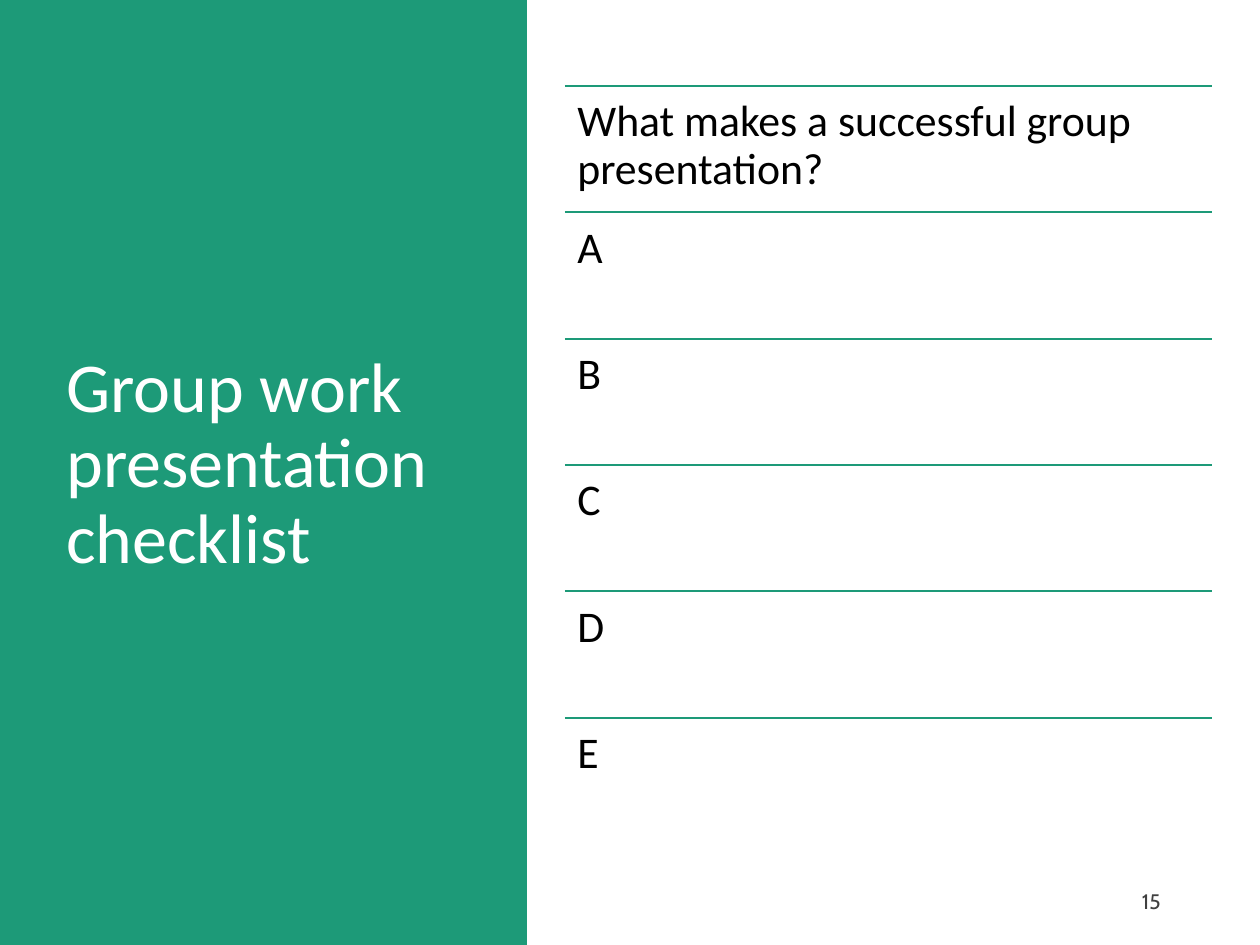
"""Build the group work presentation checklist slide."""
from dataclasses import dataclass

from lxml import etree
from pptx import Presentation
from pptx.dml.color import RGBColor
from pptx.enum.shapes import MSO_CONNECTOR, MSO_SHAPE
from pptx.enum.text import MSO_ANCHOR, PP_ALIGN
from pptx.oxml.ns import qn
from pptx.util import Emu, Pt

STRAIGHT = MSO_CONNECTOR.STRAIGHT
RECTANGLE = MSO_SHAPE.RECTANGLE
TOP, MIDDLE = MSO_ANCHOR.TOP, MSO_ANCHOR.MIDDLE
LEFT, RIGHT = PP_ALIGN.LEFT, PP_ALIGN.RIGHT

TITLE = "Group work presentation checklist"
ROWS = ["What makes a successful group presentation?", "A", "B", "C", "D", "E"]
PAGE_NUMBER = "15"

PX = 914400 / 126
PAGE_WIDTH, PAGE_HEIGHT = 1260, 945
PANEL_WIDTH = 527
BODY_TOP, BODY_HEIGHT = 86, 758
LIST_LEFT, LIST_WIDTH = 565, 647


@dataclass(frozen=True)
class Theme:
    green: str = "1D9A78"
    white: str = "FFFFFF"
    black: str = "000000"
    grey: str = "404040"
    body_font: str = "Calibri"
    number_font: str = "Cabin"
    title_size: int = 40
    row_size: int = 25
    number_size: int = 12
    rule_width: int = 1


THEME = Theme()


def px(length):
    return Emu(round(length * PX))


def add_text(page, text, left, top, width, height, *, size, color,
             font=THEME.body_font, anchor=TOP, align=LEFT, spacing=1.0,
             after=0, inset=6):
    box = page.shapes.add_textbox(px(left), px(top), px(width), px(height))
    frame = box.text_frame
    frame.word_wrap = True
    frame.vertical_anchor = anchor
    frame.margin_top = frame.margin_bottom = px(inset)
    para = frame.paragraphs[0]
    para.alignment = align
    para.line_spacing = spacing
    para.space_after = Pt(after)
    span = para.add_run()
    span.text = text
    span.font.name = font
    span.font.size = Pt(size)
    span.font.color.rgb = RGBColor.from_string(color)


def add_panel(page):
    panel = page.shapes.add_shape(RECTANGLE, 0, 0, px(PANEL_WIDTH), px(PAGE_HEIGHT))
    panel.shadow.inherit = False
    panel.fill.solid()
    panel.fill.fore_color.rgb = RGBColor.from_string(THEME.green)
    panel.line.fill.background()


def add_rule(page, left, top, width):
    rule = page.shapes.add_connector(
        STRAIGHT, px(left), px(top), px(left + width), px(top))
    rule.line.color.rgb = RGBColor.from_string(THEME.green)
    rule.line.width = Pt(THEME.rule_width)
    etree.SubElement(rule._element.spPr, qn("a:effectLst"))


def add_checklist(page):
    row_height = BODY_HEIGHT / len(ROWS)
    for index, text in enumerate(ROWS):
        top = BODY_TOP + index * row_height
        add_rule(page, LIST_LEFT, top, LIST_WIDTH)
        add_text(page, text, LIST_LEFT, top, LIST_WIDTH, row_height,
                 size=THEME.row_size, color=THEME.black, spacing=0.9, inset=13)


def main():
    deck = Presentation()
    deck.slide_width, deck.slide_height = px(PAGE_WIDTH), px(PAGE_HEIGHT)
    page = deck.slides.add_slide(deck.slide_layouts[6])
    add_panel(page)
    add_text(page, TITLE, 54, BODY_TOP, 393, BODY_HEIGHT, size=THEME.title_size,
             color=THEME.white, anchor=MIDDLE, spacing=0.9)
    add_text(page, PAGE_NUMBER, 890, 876, 283, 50, size=THEME.number_size,
             color=THEME.grey, font=THEME.number_font, anchor=MIDDLE,
             align=RIGHT, after=6)
    add_checklist(page)
    deck.save("out.pptx")


if __name__ == "__main__":
    main()
